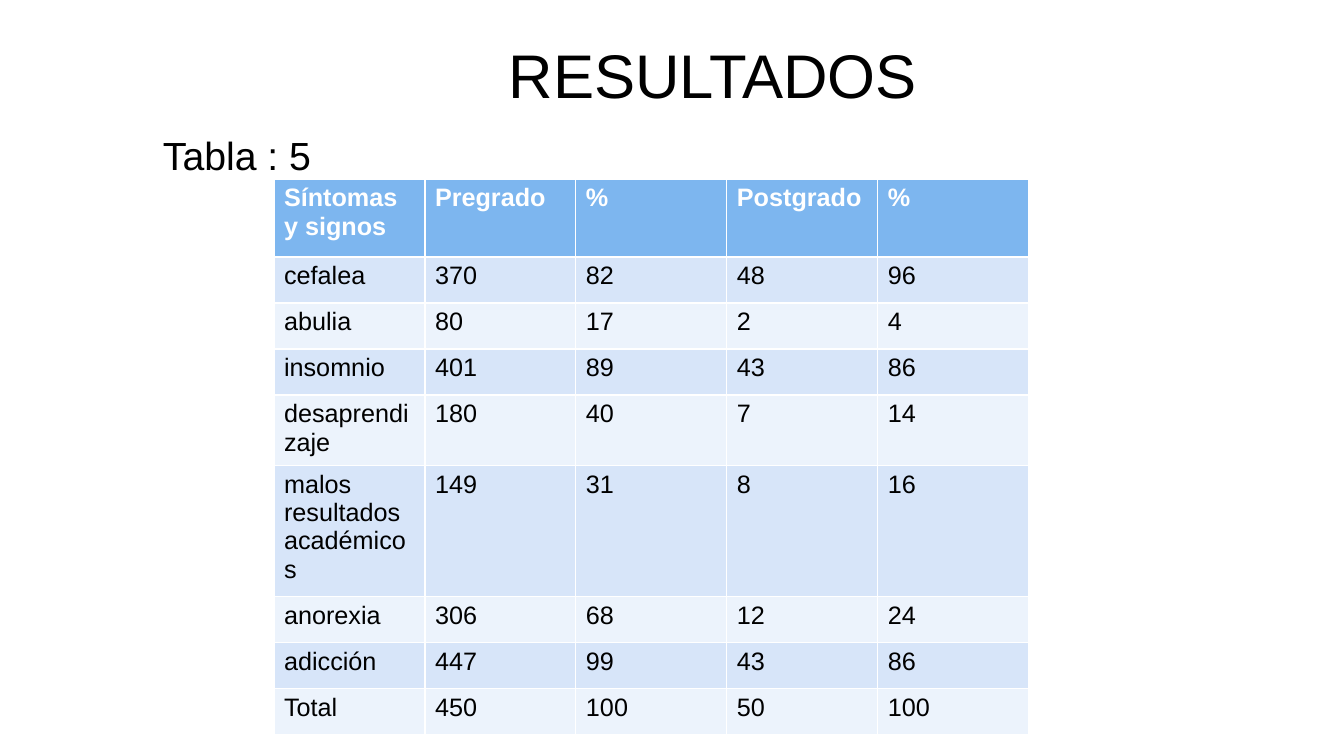
"""Build the results slide: a title, a table caption and a table of symptoms."""
from pptx import Presentation
from pptx.dml.color import RGBColor
from pptx.enum.text import MSO_ANCHOR, PP_ALIGN
from pptx.util import Pt

TITLE = "RESULTADOS"
CAPTION = "Tabla : 5"
ROWS = [
    ("Síntomas y signos", "Pregrado", "%", "Postgrado", "%"),
    ("cefalea", 370, 82, 48, 96),
    ("abulia", 80, 17, 2, 4),
    ("insomnio", 401, 89, 43, 86),
    ("desaprendizaje", 180, 40, 7, 14),
    ("malos resultados académicos", 149, 31, 8, 16),
    ("anorexia", 306, 68, 12, 24),
    ("adicción", 447, 99, 43, 86),
    ("Total", 450, 100, 50, 100),
]
COLORS = {"header": "7DB6EF", "odd": "D7E5F9", "even": "ECF3FC",
          "white": "FFFFFF", "black": "000000"}
HEADING = {"size": Pt(44), "bold": False}
LABEL = {"size": Pt(28), "bold": False}
HEADER_CELL = {"size": Pt(18), "bold": True}
BODY_CELL = {"size": Pt(18), "bold": False}
COL_W, HEADER_H, ROW_H = 151, 78, 46


def px(n):
    return round(n * 914400 / 100.8)


def rgb(name):
    return RGBColor.from_string(COLORS[name])


def write(tf, text, fmt, color, align):
    p = tf.paragraphs[0]
    p.alignment = align
    r = p.add_run()
    r.text = str(text)
    r.font.name = "Arial"
    r.font.color.rgb = rgb(color)
    for key, value in fmt.items():
        setattr(r.font, key, value)


def add_heading(sp, box, text, fmt):
    sp.left, sp.top, sp.width, sp.height = map(px, box)
    tf = sp.text_frame
    tf.word_wrap = True
    tf.vertical_anchor = MSO_ANCHOR.MIDDLE
    write(tf, text, fmt, "black", PP_ALIGN.CENTER)


def add_results(s):
    height = HEADER_H + ROW_H * (len(ROWS) - 1)
    size = (274, 179, COL_W * len(ROWS[0]), height)
    table = s.shapes.add_table(len(ROWS), len(ROWS[0]), *map(px, size)).table
    for col in table.columns:
        col.width = px(COL_W)
    for i, values in enumerate(ROWS):
        header = i == 0
        table.rows[i].height = px(HEADER_H if header else ROW_H)
        fill = "header" if header else "odd" if i % 2 else "even"
        for cell, value in zip(table.rows[i].cells, values):
            cell.fill.solid()
            cell.fill.fore_color.rgb = rgb(fill)
            write(cell.text_frame, value, HEADER_CELL if header else BODY_CELL,
                  "white" if header else "black", PP_ALIGN.LEFT)


def main():
    prs = Presentation()
    prs.slide_width, prs.slide_height = px(1344), px(756)
    s = prs.slides.add_slide(prs.slide_layouts[5])
    add_heading(s.shapes.title, (108, 11, 1210, 126), TITLE, HEADING)
    caption = s.shapes.add_textbox(0, 0, 0, 0)
    add_heading(caption, (117, 92, 240, 126), CAPTION, LABEL)
    add_results(s)
    prs.save("out.pptx")


if __name__ == "__main__":
    main()
